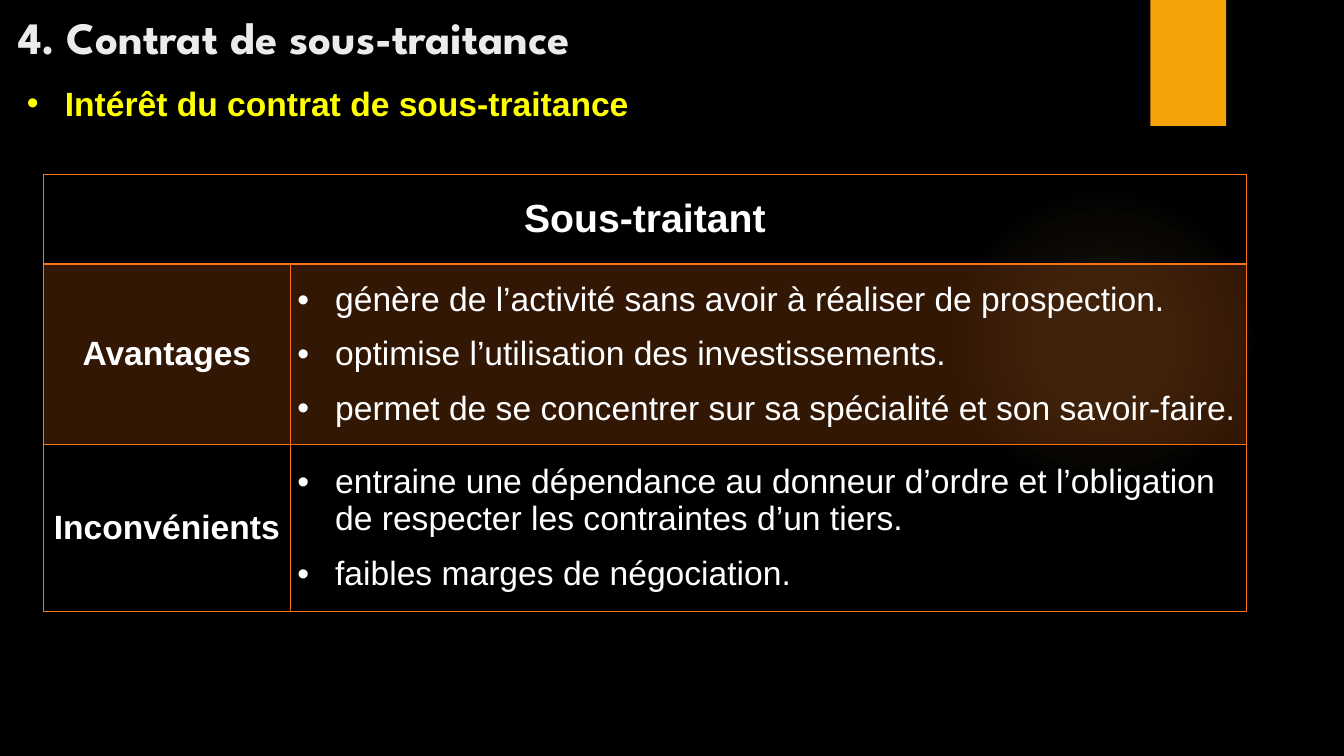
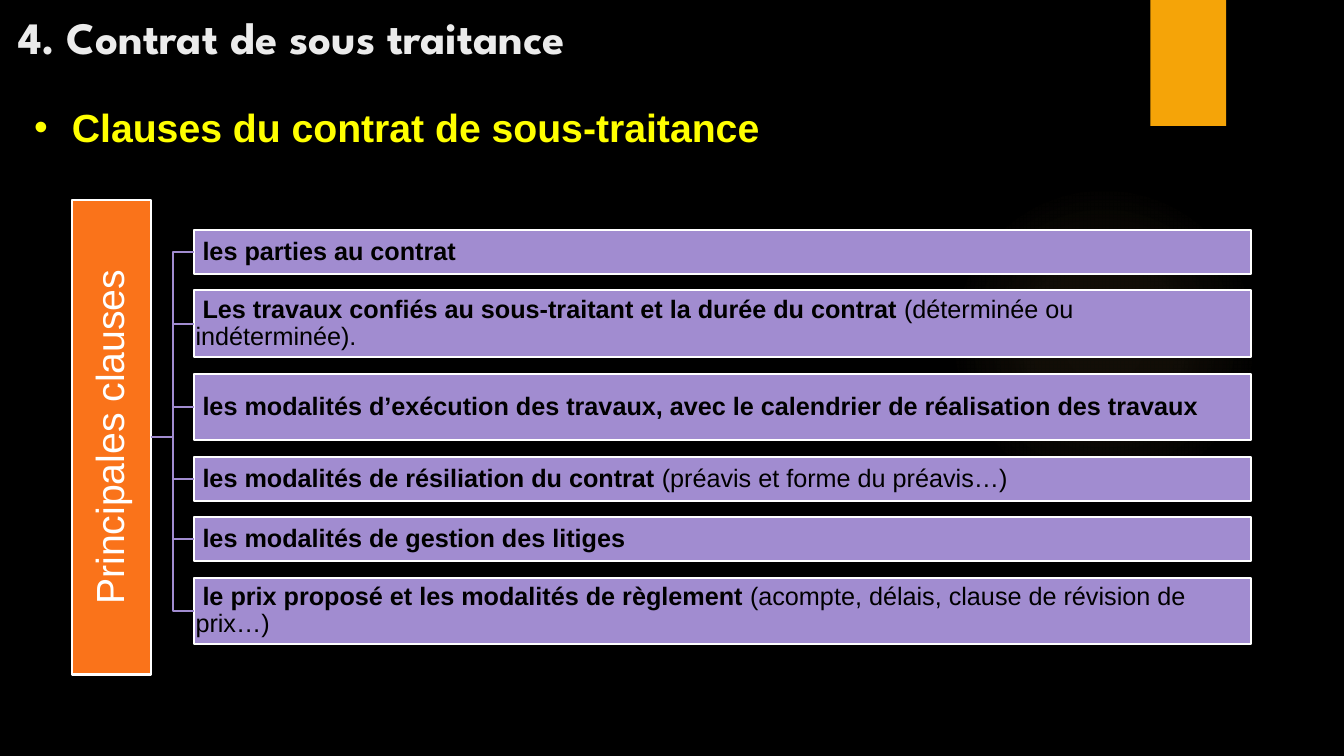
from dataclasses import dataclass

from lxml import etree
from pptx import Presentation
from pptx.dml.color import RGBColor
from pptx.enum.shapes import MSO_CONNECTOR, MSO_SHAPE
from pptx.enum.text import MSO_ANCHOR, PP_ALIGN
from pptx.oxml.ns import qn
from pptx.util import Pt

RECTANGLE, OVAL = MSO_SHAPE.RECTANGLE, MSO_SHAPE.OVAL
ELBOW = MSO_CONNECTOR.ELBOW
TOP, MIDDLE, BOTTOM = MSO_ANCHOR.TOP, MSO_ANCHOR.MIDDLE, MSO_ANCHOR.BOTTOM
LEFT, CENTER = PP_ALIGN.LEFT, PP_ALIGN.CENTER
LEFT_SITE, RIGHT_SITE = 1, 3


@dataclass(frozen=True)
class Theme:
    background: str = "000000"
    title: str = "EBEBEB"
    heading: str = "FFFF00"
    light: str = "FFFFFF"
    dark: str = "000000"
    gold: str = "F5A408"
    glow: str = "FAC96A"
    orange: str = "FA731A"
    violet: str = "A18CD0"
    title_font: str = "League Spartan"
    body_font: str = "Arial"
    title_size: int = 32
    large: int = 28
    medium: int = 24
    small: int = 18
    bullet_indent: int = 27
    outline: float = 1.5


@dataclass(frozen=True)
class Box:
    left: float
    top: float
    width: float
    height: float

    def lengths(self):
        return Pt(self.left), Pt(self.top), Pt(self.width), Pt(self.height)


THEME = Theme()
GLOW_STOPS = [(0, 7), (36, 6), (69, 0)]  # position and opacity, in percent


def color(code):
    return RGBColor.from_string(code)


def add_child(parent, tag, **attributes):
    child = etree.SubElement(parent, qn(tag))
    for name, value in attributes.items():
        child.set(name, str(value))
    return child


# Text

def add_span(para, text, size, code, bold=False, font=THEME.body_font):
    span = para.add_run()
    span.text = text
    span.font.name, span.font.size, span.font.bold = font, Pt(size), bold
    span.font.color.rgb = color(code)


def add_bullet(para):
    properties = para._p.get_or_add_pPr()
    properties.set("marL", str(Pt(THEME.bullet_indent)))
    properties.set("indent", str(-Pt(THEME.bullet_indent)))
    add_child(properties, "a:buFont", typeface=THEME.body_font)
    add_child(properties, "a:buChar", char="•")


def set_frame(frame, anchor, left=7.2, top=3.6, right=7.2, bottom=3.6):
    frame.word_wrap = True
    frame.vertical_anchor = anchor
    frame.margin_left, frame.margin_top = Pt(left), Pt(top)
    frame.margin_right, frame.margin_bottom = Pt(right), Pt(bottom)


def add_text_box(page, box, anchor):
    frame = page.shapes.add_textbox(*box.lengths()).text_frame
    set_frame(frame, anchor)
    return frame.paragraphs[0]


def add_heading(page, box, text, size):
    para = add_text_box(page, box, TOP)
    add_bullet(para)
    add_span(para, text, size, THEME.heading, bold=True)


# Shapes

def add_panel(page, box, fill, line=None, kind=RECTANGLE):
    panel = page.shapes.add_shape(kind, *box.lengths())
    panel.shadow.inherit = False
    panel.fill.solid()
    panel.fill.fore_color.rgb = color(fill)
    if line:
        panel.line.color.rgb = color(line)
        panel.line.width = Pt(THEME.outline)
    else:
        panel.line.fill.background()
    return panel


def add_glow(page, box):
    glow = add_panel(page, box, THEME.glow, kind=OVAL)
    properties = glow._element.spPr
    gradient = etree.Element(qn("a:gradFill"), rotWithShape="1")
    stops = add_child(gradient, "a:gsLst")
    for position, opacity in GLOW_STOPS:
        stop = add_child(stops, "a:gs", pos=position * 1000)
        tint = add_child(stop, "a:srgbClr", val=THEME.glow)
        add_child(tint, "a:alpha", val=opacity * 1000)
    circle = add_child(gradient, "a:path", path="circle")
    add_child(circle, "a:fillToRect", l=50000, t=50000, r=50000, b=50000)
    properties.replace(properties.find(qn("a:solidFill")), gradient)


def add_branch(page, start, end):
    branch = page.shapes.add_connector(ELBOW, 0, 0, 0, 0)
    branch.begin_connect(start, RIGHT_SITE)
    branch.end_connect(end, LEFT_SITE)
    branch.line.color.rgb = color(THEME.violet)
    branch.line.width = Pt(THEME.outline)
    add_child(branch._element.spPr, "a:effectLst")


def add_page(deck, title):
    """Blank slide with the shared glow, gold band and title."""
    page = deck.slides.add_slide(deck.slide_layouts[6])
    add_glow(page, Box(677.5, 131.8, 221.8, 221.8))
    add_panel(page, Box(821.8, 0, 54, 90), THEME.gold)
    para = add_text_box(page, Box(5.8, 0, 694.8, 49), BOTTOM)
    add_span(para, title, THEME.title_size, THEME.title, bold=True,
             font=THEME.title_font)
    return page


# Table

def style_cell(cell, top_width, bottom_width, shaded):
    set_frame_margins = dict(left=5, top=0, right=5, bottom=0)
    cell.vertical_anchor = MIDDLE
    for side, margin in set_frame_margins.items():
        setattr(cell, "margin_" + side, Pt(margin))
    properties = cell._tc.get_or_add_tcPr()
    widths = {"a:lnL": 1, "a:lnR": 1, "a:lnT": top_width, "a:lnB": bottom_width}
    for tag, width in widths.items():
        edge = add_child(properties, tag, w=Pt(width))
        add_child(add_child(edge, "a:solidFill"), "a:srgbClr", val=THEME.orange)
    if shaded:
        cell.fill.solid()
        cell.fill.fore_color.rgb = color(THEME.orange)
        tint = properties.find(qn("a:solidFill")).find(qn("a:srgbClr"))
        add_child(tint, "a:alpha", val=20000)
    else:
        cell.fill.background()


def fill_label(cell, text, size):
    para = cell.text_frame.paragraphs[0]
    para.alignment = CENTER
    add_span(para, text, size, THEME.light, bold=True)


def fill_points(cell, points):
    frame = cell.text_frame
    for index, point in enumerate(points):
        para = frame.add_paragraph() if index else frame.paragraphs[0]
        add_bullet(para)
        if index:
            para.space_before = Pt(12)
        add_span(para, point, THEME.medium, THEME.light)


def add_comparison(page, box, header, sections, label_width, row_heights):
    table = page.shapes.add_table(len(sections) + 1, 2, *box.lengths()).table
    table.first_row = table.horz_banding = False
    table.columns[0].width = Pt(label_width)
    table.columns[1].width = Pt(box.width - label_width)
    for index, height in enumerate(row_heights):
        table.rows[index].height = Pt(height)
        for cell in table.rows[index].cells:
            style_cell(cell, 2 if index == 1 else 1, 2 if index == 0 else 1,
                       shaded=index % 2 == 1)
    table.cell(0, 0).merge(table.cell(0, 1))
    fill_label(table.cell(0, 0), header, THEME.large)
    for row, (label, points) in enumerate(sections, start=1):
        fill_label(table.cell(row, 0), label, THEME.medium)
        fill_points(table.cell(row, 1), points)


# Clause tree

def add_root(page, box, text):
    root = add_panel(page, box, THEME.orange, THEME.light)
    set_frame(root.text_frame, MIDDLE, 1.4, 1.4, 1.4, 1.4)
    root.text_frame._txBody.bodyPr.set("vert", "vert270")
    para = root.text_frame.paragraphs[0]
    para.alignment, para.line_spacing = CENTER, 0.9
    add_span(para, text, THEME.large, THEME.light)
    return root


def add_clause(page, box, clause, detail):
    panel = add_panel(page, box, THEME.violet, THEME.light)
    set_frame(panel.text_frame, MIDDLE, 0.8, 0.8, 15, 0.8)
    para = panel.text_frame.paragraphs[0]
    para._p.get_or_add_pPr().set("indent", str(Pt(5)))
    para.alignment, para.line_spacing = LEFT, 0.9
    add_span(para, clause, THEME.small, THEME.dark, bold=True)
    if detail:
        add_span(para, " " + detail, THEME.small, THEME.dark)
    return panel


def add_clause_tree(page, box, root_text, clauses):
    root_width, branch_width, gap = 56.5, 31, 11.9
    heights = {1: 31.2, 2: 47.6}
    root = add_root(page, Box(box.left, box.top, root_width, box.height), root_text)
    left = box.left + root_width + branch_width
    width = box.width - root_width - branch_width
    stack = sum(heights[lines] for lines, _, _ in clauses) + gap * (len(clauses) - 1)
    top = box.top + (box.height - stack) / 2
    for lines, clause, detail in clauses:
        panel = add_clause(page, Box(left, top, width, heights[lines]), clause, detail)
        add_branch(page, root, panel)
        top += heights[lines] + gap


# Slides

def build_interest(deck):
    page = add_page(deck, "4. Contrat de sous-traitance")
    add_heading(page, Box(12.2, 55.4, 600, 36),
                "Intérêt du contrat de sous-traitance", THEME.medium)
    sections = [
        ("Avantages", [
            "génère de l’activité sans avoir à réaliser de prospection.",
            "optimise l’utilisation des investissements.",
            "permet de se concentrer sur sa spécialité et son savoir-faire."]),
        ("Inconvénients", [
            "entraine une dépendance au donneur d’ordre et l’obligation "
            "de respecter les contraintes d’un tiers.",
            "faibles marges de négociation."]),
    ]
    add_comparison(page, Box(31, 124.6, 859.2, 312), "Sous-traitant", sections,
                   label_width=176.4, row_heights=[64, 128.7, 119.3])


def build_clauses(deck):
    page = add_page(deck, "4. Contrat de sous traitance")
    add_heading(page, Box(17.3, 70.6, 895.7, 41),
                "Clauses du contrat de sous-traitance", THEME.large)
    clauses = [  # height in lines, clause, detail
        (1, "les parties au contrat", ""),
        (2, "Les travaux confiés au sous-traitant et la durée du contrat",
         "(déterminée ou indéterminée)."),
        (2, "les modalités d’exécution des travaux, avec le calendrier de "
            "réalisation des travaux", ""),
        (1, "les modalités de résiliation du contrat",
         "(préavis et forme du préavis…)"),
        (1, "les modalités de gestion des litiges", ""),
        (2, "le prix proposé et les modalités de règlement",
         "(acompte, délais, clause de révision de prix…)"),
    ]
    add_clause_tree(page, Box(51.4, 142.8, 842.2, 339), "Principales clauses", clauses)


def main():
    deck = Presentation()
    deck.slide_width, deck.slide_height = Pt(960), Pt(540)
    backdrop = deck.slide_master.background.fill
    backdrop.solid()
    backdrop.fore_color.rgb = color(THEME.background)
    build_interest(deck)
    build_clauses(deck)
    deck.save("out.pptx")


if __name__ == "__main__":
    main()
